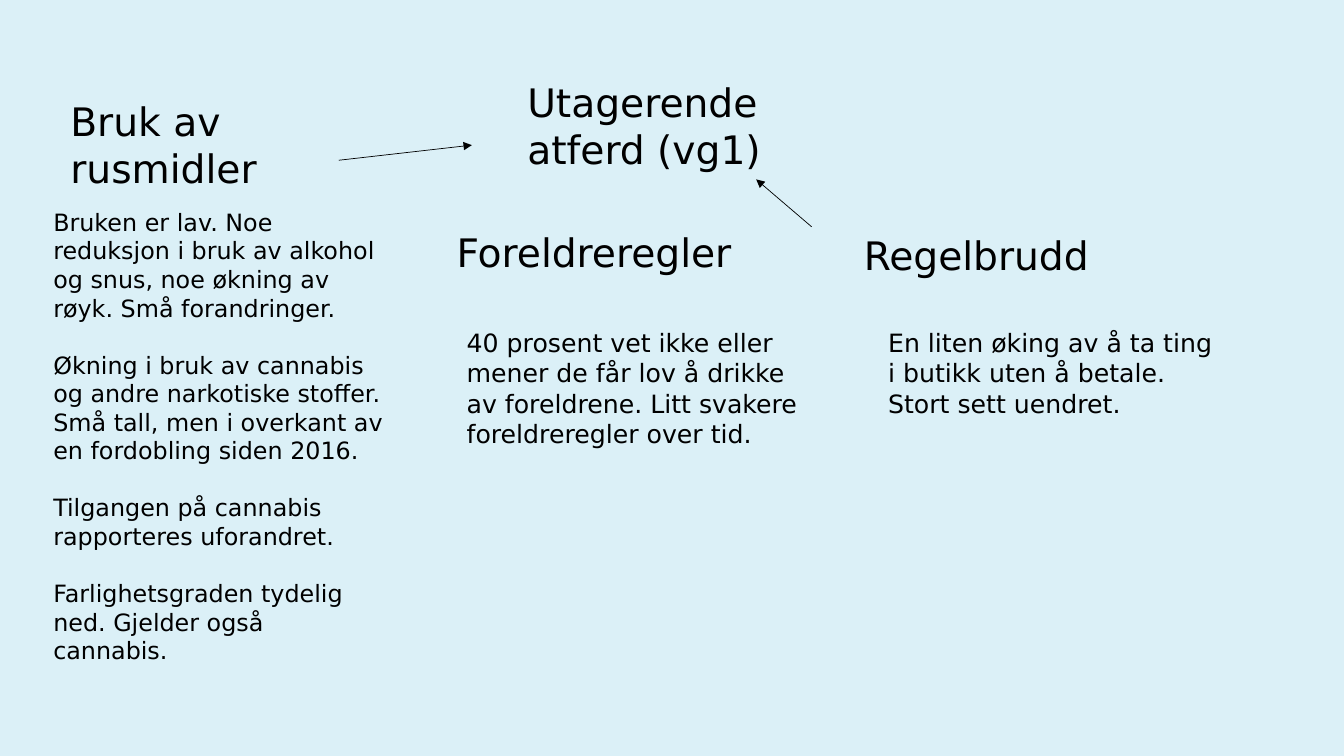
from dataclasses import dataclass

from lxml.etree import SubElement
from pptx import Presentation
from pptx.dml.color import RGBColor as RGB
from pptx.enum.shapes import MSO_CONNECTOR as Link
from pptx.enum.text import MSO_ANCHOR as Anchor
from pptx.enum.text import MSO_AUTO_SIZE as Fit
from pptx.enum.text import PP_ALIGN as Align
from pptx.oxml.ns import qn
from pptx.util import Inches, Pt


@dataclass(frozen=True)
class Theme:
    back: RGB = RGB(0xDB, 0xF0, 0xF7)
    ink: RGB = RGB(0, 0, 0)
    face: str = "DejaVu Sans"
    head: float = 28
    body: float = 18
    small: float = 17
    gap: float = 20.4
    line: float = 0.5


THEME = Theme()

DRUGS = [
    "Bruken er lav. Noe reduksjon i bruk av alkohol og snus, noe økning av røyk. Små forandringer.",
    "Økning i bruk av cannabis og andre narkotiske stoffer. Små tall, men i overkant av en fordobling siden 2016.",
    "Tilgangen på cannabis rapporteres uforandret.",
    "Farlighetsgraden tydelig ned. Gjelder også cannabis.",
]
RULES = ["40 prosent vet ikke eller mener de får lov å drikke av foreldrene. Litt svakere foreldreregler over tid."]
BREACH = ["En liten øking av å ta ting i butikk uten å betale. Stort sett uendret."]


def apply(target, values):
    for name, value in values.items():
        setattr(target, name, value)


def write(shape, texts, size):
    frame = shape.text_frame
    apply(frame, {"word_wrap": True, "auto_size": Fit.SHAPE_TO_FIT_TEXT, "vertical_anchor": Anchor.TOP})
    for i, text in enumerate(texts):
        para = frame.paragraphs[0] if i == 0 else frame.add_paragraph()
        para.text = text
        apply(para, {"alignment": Align.LEFT, "space_before": Pt(THEME.gap if i else 0)})
        apply(para.font, {"name": THEME.face, "size": Pt(size), "bold": False})
        para.font.color.rgb = THEME.ink


def add_title(slide, box, text):
    title = slide.shapes.title
    apply(title, dict(zip(("left", "top", "width", "height"), map(Inches, box))))
    write(title, [text], THEME.head)


def add_text(slide, box, texts, size):
    write(slide.shapes.add_textbox(*map(Inches, box)), texts, size)


def add_topic(slide, box, head, shift, wide, tall, texts, size):
    left, top, width, height = box
    add_text(slide, box, [head], THEME.head)
    add_text(slide, (left + shift[0], top + shift[1], wide, tall), texts, size)


def add_arrow(slide, start, end):
    arrow = slide.shapes.add_connector(Link.STRAIGHT, *map(Inches, start + end))
    arrow.line.color.rgb = THEME.ink
    arrow.line.width = Pt(THEME.line)
    SubElement(arrow.line._get_or_add_ln(), qn("a:tailEnd"), type="triangle")
    SubElement(arrow._element.spPr, qn("a:effectLst"))


def main():
    deck = Presentation()
    apply(deck, {"slide_width": Inches(13.33), "slide_height": Inches(7.5)})
    slide = deck.slides.add_slide(deck.slide_layouts[5])
    fill = slide.background.fill
    fill.solid()
    fill.fore_color.rgb = THEME.back

    add_title(slide, (5.13, 0.73, 2.79, 1.04), "Utagerende atferd (vg1)")
    add_topic(slide, (0.6, 0.92, 2.79, 1.04), "Bruk av rusmidler",
              (-0.17, 1.09), 3.49, 4.96, DRUGS, THEME.small)
    add_topic(slide, (4.43, 2.22, 3.69, 0.57), "Foreldreregler",
              (0.1, 0.98), 3.49, 1.62, RULES, THEME.body)
    add_topic(slide, (8.47, 2.25, 2.79, 0.57), "Regelbrudd",
              (0.24, 0.95), 3.52, 1.62, BREACH, THEME.body)
    add_arrow(slide, (3.36, 1.59), (4.68, 1.44))
    add_arrow(slide, (8.05, 2.25), (7.5, 1.78))
    deck.save("out.pptx")


if __name__ == "__main__":
    main()
